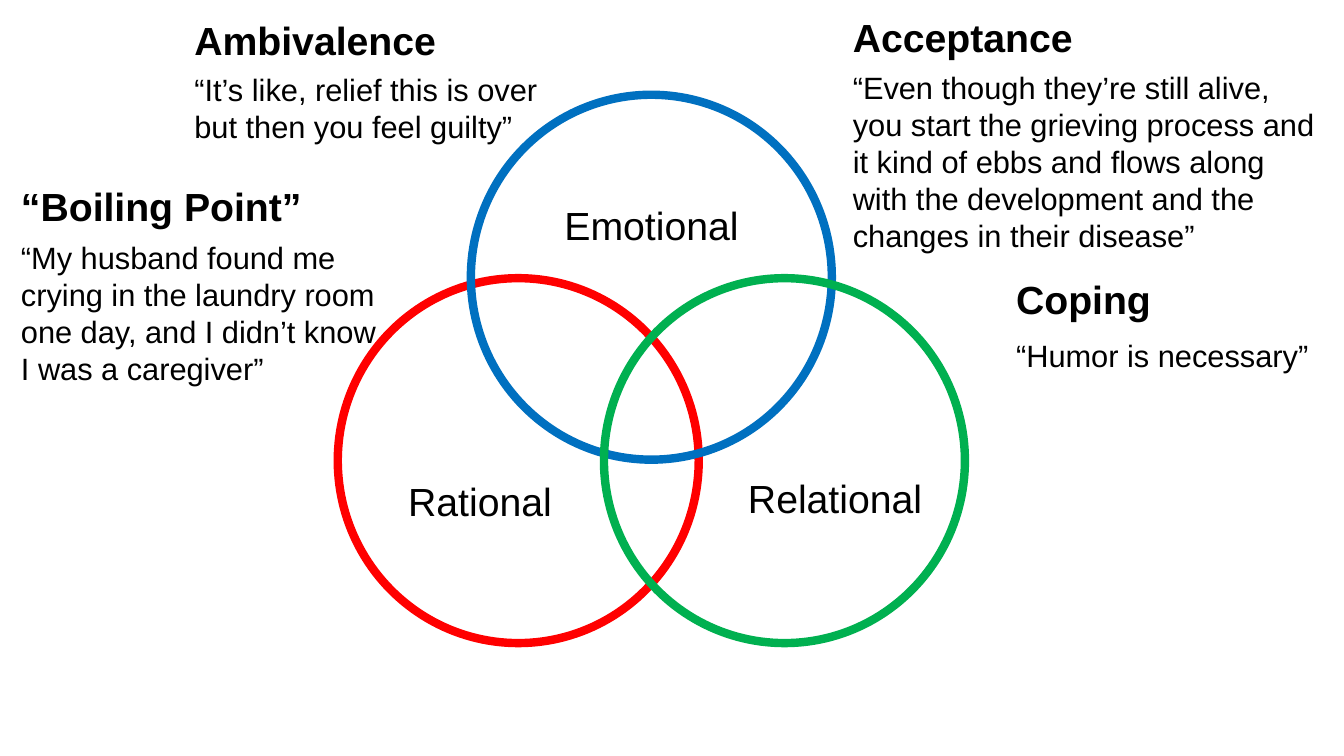
from pptx import Presentation
from pptx.dml.color import RGBColor
from pptx.enum import shapes
from pptx.util import Inches, Pt

RED = RGBColor(0xFF, 0x00, 0x00)
BLUE = RGBColor(0x00, 0x70, 0xC0)
GREEN = RGBColor(0x00, 0xB0, 0x50)
BLACK = RGBColor(0x00, 0x00, 0x00)

SLIDE_WIDTH, SLIDE_HEIGHT = 13.33, 7.5
CIRCLE_WIDTH, CIRCLE_HEIGHT = 3.58, 3.62
VENN_LEFT, VENN_TOP = 3.35, 0.94
STEP_X, STEP_Y = 1.32, 1.82  # offset between neighbouring circles
LARGE, SMALL = 28, 22
LINE_HEIGHT = 0.57

# colour, column and row of each circle on the Venn grid
CIRCLES = [(RED, 0, 1), (BLUE, 1, 0), (GREEN, 2, 1)]

# wording, left, top, width
LABELS = [
    ("Rational", 3.95, 4.69, 1.65),
    ("Relational", 7.32, 4.66, 1.95),
    ("Emotional", 5.5, 1.95, 1.95),
]

# left, (heading, top, width, height), (quote, top, width, height)
THEMES = [
    (8.36, ("Acceptance", 0.08, 2.41, LINE_HEIGHT),
     ("“Even though they’re still alive, you start the grieving process and "
      "it kind of ebbs and flows along with the development and the changes "
      "in their disease”", 0.63, 4.81, 1.95)),
    (1.83, ("Ambivalence", 0.11, 2.63, 0.88),
     ("“It’s like, relief this is over but then you feel guilty”",
      0.65, 3.65, 0.84)),
    (9.98, ("Coping", 2.68, 1.84, LINE_HEIGHT),
     ("“Humor is necessary”", 3.29, 3.14, 0.47)),
    (0.11, ("“Boiling Point”", 1.76, 3.01, LINE_HEIGHT),
     ("“My husband found me crying in the laundry room one day, and I didn’t "
      "know I was a caregiver”", 2.32, 3.76, 1.58)),
]


def add_circle(page, color, column, row):
    circle = page.shapes.add_shape(
        shapes.MSO_SHAPE.OVAL,
        Inches(VENN_LEFT + column * STEP_X), Inches(VENN_TOP + row * STEP_Y),
        Inches(CIRCLE_WIDTH), Inches(CIRCLE_HEIGHT))
    circle.shadow.inherit = False
    circle.fill.background()
    circle.line.color.rgb = color
    circle.line.width = Pt(6)


def add_text(page, wording, left, top, width, height, size, bold=False):
    box = page.shapes.add_textbox(
        Inches(left), Inches(top), Inches(width), Inches(height))
    box.text_frame.word_wrap = True
    para = box.text_frame.paragraphs[0]
    para.text = wording
    para.font.name = "Arial"
    para.font.size = Pt(size)
    para.font.bold = bold
    para.font.color.rgb = BLACK


def main():
    deck = Presentation()
    deck.slide_width = Inches(SLIDE_WIDTH)
    deck.slide_height = Inches(SLIDE_HEIGHT)
    page = deck.slides.add_slide(deck.slide_layouts.get_by_name("Blank"))

    for color, column, row in CIRCLES:
        add_circle(page, color, column, row)
    for wording, left, top, width in LABELS:
        add_text(page, wording, left, top, width, LINE_HEIGHT, LARGE)
    for left, heading, quote in THEMES:
        for (wording, *place), size in ((heading, LARGE), (quote, SMALL)):
            add_text(page, wording, left, *place, size, bold=size == LARGE)

    deck.save("out.pptx")


if __name__ == "__main__":
    main()
